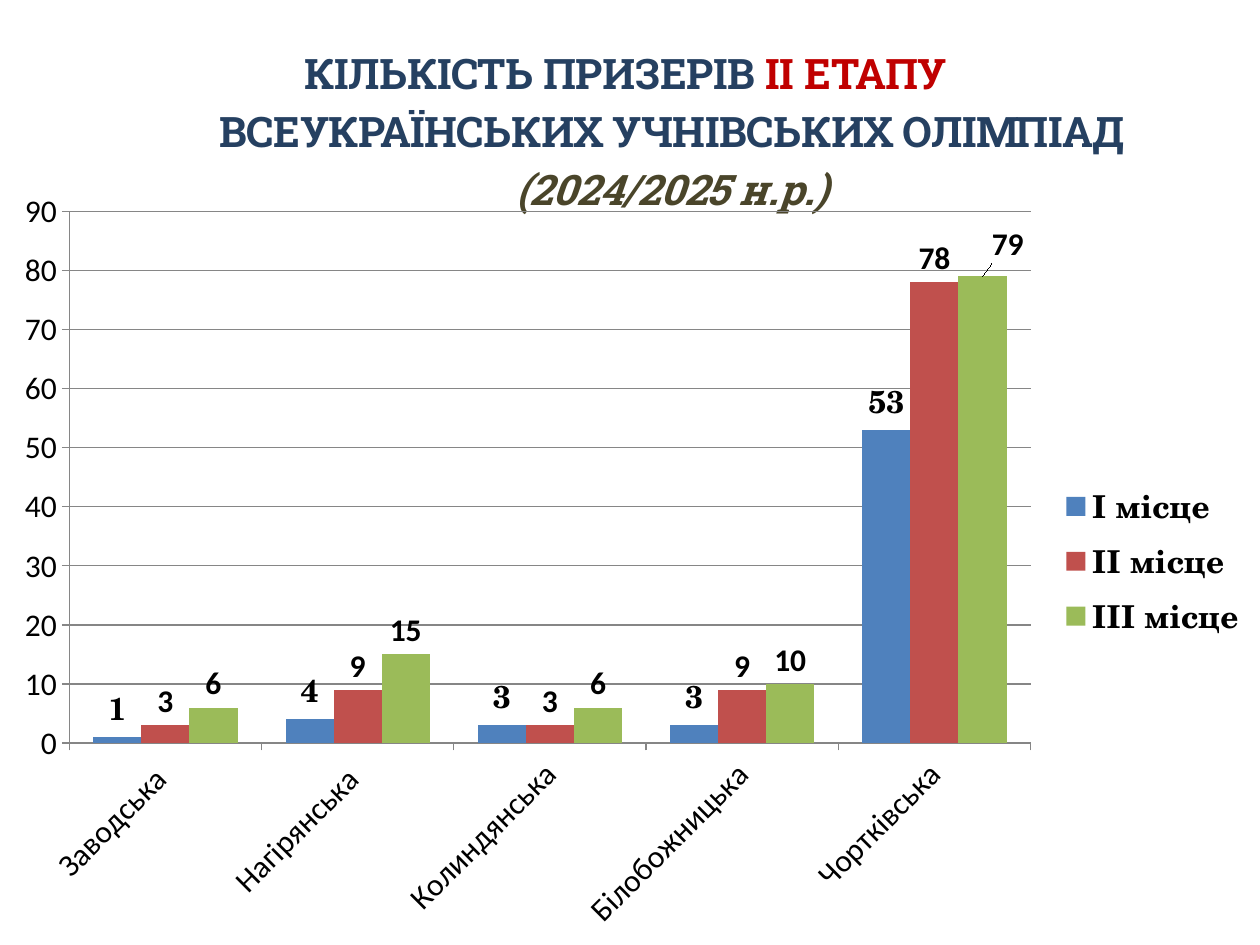
from lxml import etree
from pptx import Presentation
from pptx.chart.data import CategoryChartData
from pptx.dml.color import RGBColor
from pptx.enum.chart import XL_CHART_TYPE, XL_LABEL_POSITION, XL_LEGEND_POSITION, XL_TICK_MARK
from pptx.enum.text import MSO_ANCHOR, PP_ALIGN
from pptx.oxml.ns import qn
from pptx.util import Inches, Pt

COLUMNS = XL_CHART_TYPE.COLUMN_CLUSTERED
OUTSIDE_END = XL_LABEL_POSITION.OUTSIDE_END
LEGEND_RIGHT = XL_LEGEND_POSITION.RIGHT
TICK_OUT, TICK_NONE = XL_TICK_MARK.OUTSIDE, XL_TICK_MARK.NONE
MIDDLE = MSO_ANCHOR.MIDDLE
CENTER = PP_ALIGN.CENTER

NAVY = RGBColor(0x25, 0x40, 0x61)
CRIMSON = RGBColor(0xC0, 0x00, 0x00)
OLIVE = RGBColor(0x4A, 0x45, 0x2A)
BLACK = RGBColor(0x00, 0x00, 0x00)
GRAY = RGBColor(0x86, 0x86, 0x86)
BLUE = RGBColor(0x4F, 0x81, 0xBD)
RED = RGBColor(0xC0, 0x50, 0x4D)
GREEN = RGBColor(0x9B, 0xBB, 0x59)

TITLE_FONT = "Roboto Slab"
SERIF_FONT = "TeX Gyre Schola"
BODY_FONT = "Calibri"


def set_layout(layout, **values):
    manual = etree.SubElement(layout, qn("c:manualLayout"))
    for name, value in values.items():
        etree.SubElement(manual, qn(f"c:{name}")).set("val", str(value))


prs = Presentation()
prs.slide_width = Inches(10)
prs.slide_height = Inches(7.5)
s = prs.slides.add_slide(prs.slide_layouts[6])

sp = s.shapes.add_textbox(Inches(0.5), Inches(0.3), Inches(9), Inches(1.41))
tf = sp.text_frame
tf.word_wrap = True
tf.vertical_anchor = MIDDLE
tf.margin_left = tf.margin_right = tf.margin_bottom = 0
tf.margin_top = Inches(0.01)
p = tf.paragraphs[0]
p.alignment = CENTER
p.line_spacing = 1.15
pPr = p._p.get_or_add_pPr()
pPr.set("marL", str(Inches(0.67)))
pPr.set("indent", str(Inches(-0.66)))

title_runs = [
    ("КІЛЬКІСТЬ ПРИЗЕРІВ ", NAVY, False, -20),
    ("ІІ ", CRIMSON, False, -10),
    ("ЕТАПУ ", CRIMSON, False, -20),
    ("ВСЕУКРАЇНСЬКИХ УЧНІВСЬКИХ ОЛІМПІАД", NAVY, False, -20),
    (" (2024/2025 н.р.)", OLIVE, True, -20),
]
for text, color, italic, spacing in title_runs:
    r = p.add_run()
    r.text = text
    r.font.name = TITLE_FONT
    r.font.size = Pt(24)
    r.font.bold = True
    r.font.italic = italic
    r.font.color.rgb = color
    r._r.get_or_add_rPr().set("spc", str(spacing))
    if text == "ЕТАПУ ":
        p.add_line_break()

places = [
    ("І місце", (1, 4, 3, 3, 53), BLUE, SERIF_FONT),
    ("ІІ місце", (3, 9, 3, 9, 78), RED, BODY_FONT),
    ("ІІІ місце", (6, 15, 6, 10, 79), GREEN, BODY_FONT),
]
data = CategoryChartData()
data.categories = ["Заводська ", "Нагірянська ", "Колиндянська", "Білобожницька", "Чортківська"]
for name, values, color, font in places:
    data.add_series(name, values)
chart = s.shapes.add_chart(COLUMNS, 0, Inches(1.41), Inches(10), Inches(6.09), data).chart
chart.has_title = False
chart.font.name = BODY_FONT
chart.font.size = Pt(18)
chart.font.color.rgb = BLACK

chart.has_legend = True
legend = chart.legend
legend.position = LEGEND_RIGHT
legend.include_in_layout = False
legend.font.name = SERIF_FONT
legend.font.size = Pt(18)
legend.font.bold = True

cat_axis, val_axis = chart.category_axis, chart.value_axis
for axis in (cat_axis, val_axis):
    axis.major_tick_mark = TICK_OUT
    axis.minor_tick_mark = TICK_NONE
    axis.format.line.color.rgb = GRAY
    axis.tick_labels.font.size = Pt(18)
cat_axis._element.find(qn("c:txPr")).find(qn("a:bodyPr")).set("rot", "-2700000")
val_axis.minimum_scale = 0
val_axis.maximum_scale = 90
val_axis.major_unit = 10
val_axis.has_major_gridlines = True
val_axis.major_gridlines.format.line.color.rgb = GRAY

plot = chart.plots[0]
plot.gap_width = 100
plot.overlap = 0
plot.vary_by_categories = False
for series, (name, values, color, font) in zip(plot.series, places):
    series.format.fill.solid()
    series.format.fill.fore_color.rgb = color
    labels = series.data_labels
    labels.show_value = True
    labels.position = OUTSIDE_END
    labels.font.name = font
    labels.font.size = Pt(18)
    labels.font.bold = True

label = plot.series[2].points[4].data_label
label.position = OUTSIDE_END
label.font.name = BODY_FONT
label.font.size = Pt(18)
label.font.bold = True
layout = etree.Element(qn("c:layout"))
chart._chartSpace.xpath(".//c:dLbl/c:idx")[0].addnext(layout)
set_layout(layout, x=0.02, y=-0.01)

plot_area = chart._chartSpace.chart.plotArea
for layout in plot_area.findall(qn("c:layout")):
    plot_area.remove(layout)
layout = etree.Element(qn("c:layout"))
plot_area.insert(0, layout)
set_layout(layout, layoutTarget="inner", xMode="edge", yMode="edge",
           x=0.055, y=0.044, w=0.763, h=0.693)

prs.save("out.pptx")
